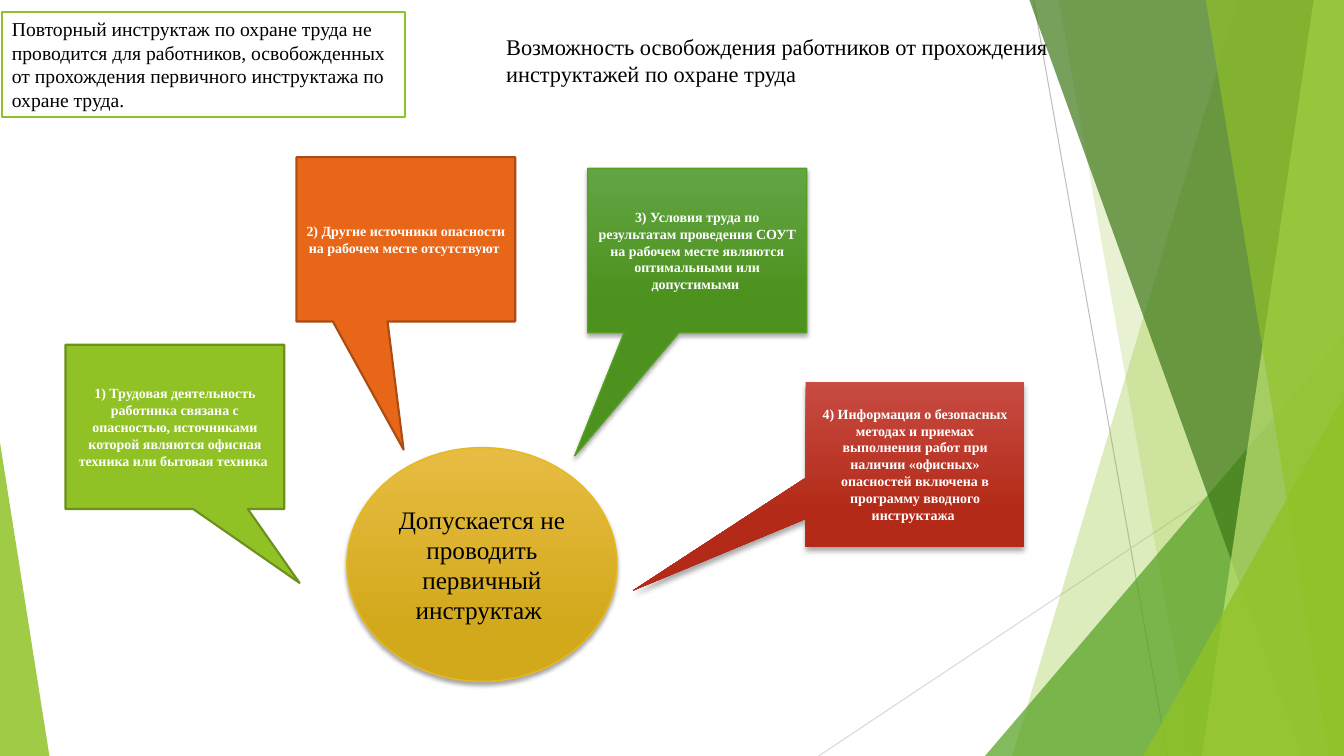
from dataclasses import dataclass

from lxml import etree
from pptx import Presentation
from pptx.dml.color import RGBColor
from pptx.enum.shapes import MSO_CONNECTOR, MSO_SHAPE
from pptx.enum.text import MSO_ANCHOR, MSO_AUTO_SIZE, PP_ALIGN
from pptx.oxml.ns import qn
from pptx.util import Inches, Pt

TRIANGLE = MSO_SHAPE.ISOSCELES_TRIANGLE
CALLOUT = MSO_SHAPE.RECTANGULAR_CALLOUT
ELLIPSE = MSO_SHAPE.OVAL
RECTANGLE = MSO_SHAPE.RECTANGLE
STRAIGHT = MSO_CONNECTOR.STRAIGHT
LEFT, CENTER = PP_ALIGN.LEFT, PP_ALIGN.CENTER
TOP, MIDDLE = MSO_ANCHOR.TOP, MSO_ANCHOR.MIDDLE
FIXED = MSO_AUTO_SIZE.NONE

WIDTH, HEIGHT = 13.33, 7.5
CALLOUT_SIZE = (2.17, 1.63)


@dataclass(frozen=True)
class Theme:
    font: str = "Times New Roman"
    title_size: int = 16
    center_size: int = 18
    note_size: int = 14
    callout_size: int = 10
    black: str = "000000"
    white: str = "FFFFFF"
    lime: str = "90C226"
    lime_edge: str = "6B901C"
    pale_lime: str = "C0E474"
    green: str = "54A021"
    dark_green: str = "3F7819"
    green_fade: tuple = ("63A545", "4D921E")
    orange: str = "E76618"
    orange_edge: str = "AB4B12"
    red_fade: tuple = ("C74B42", "B32B18")
    gold: str = "E6B91E"
    gold_fade: tuple = ("E7BC43", "D2A91B")
    gray: str = "BFBFBF"
    light_gray: str = "D9D9D9"


THEME = Theme()


def rgb(color):
    return RGBColor.from_string(color)


def set_fill(sp, color, opacity=100):
    sp.shadow.inherit = False
    if isinstance(color, tuple):
        sp.fill.gradient()
        sp.fill.gradient_angle = 270
        for stop, position, shade in zip(sp.fill.gradient_stops, (0, 0.78), color):
            stop.position = position
            stop.color.rgb = rgb(shade)
        return
    sp.fill.solid()
    sp.fill.fore_color.rgb = rgb(color)
    if opacity < 100:
        srgb = sp.fill._xPr.find(qn("a:solidFill")).find(qn("a:srgbClr"))
        etree.SubElement(srgb, qn("a:alpha"), val=str(opacity * 1000))


def set_line(sp, color=None, width=1.0):
    if color is None:
        sp.line.fill.background()
        return
    sp.line.color.rgb = rgb(color)
    sp.line.width = Pt(width)


def add_shadow(sp, blur, distance):
    effects = sp._element.spPr.find(qn("a:effectLst"))
    outer = etree.SubElement(
        effects, qn("a:outerShdw"), blurRad=str(Pt(blur)), dist=str(Pt(distance)),
        dir="5400000", rotWithShape="0")
    srgb = etree.SubElement(outer, qn("a:srgbClr"), val=THEME.black)
    etree.SubElement(srgb, qn("a:alpha"), val="35000")


def set_text(sp, text, size, color, bold=False, align=CENTER, anchor=MIDDLE):
    tf = sp.text_frame
    tf.word_wrap = True
    tf.auto_size = FIXED
    tf.vertical_anchor = anchor
    p = tf.paragraphs[0]
    p.alignment = align
    r = p.add_run()
    r.text = text
    r.font.name = THEME.font
    r.font.size = Pt(size)
    r.font.bold = bold
    r.font.color.rgb = rgb(color)


def add_shape(s, kind, box, fill, line=None, width=1.0, opacity=100, adjust=()):
    sp = s.shapes.add_shape(kind, *map(Inches, box))
    for i, value in enumerate(adjust):
        sp.adjustments[i] = value
    set_fill(sp, fill, opacity)
    set_line(sp, line, width)
    return sp


def add_thin_line(s, start, end, color):
    line = s.shapes.add_connector(STRAIGHT, *map(Inches, start + end))
    set_line(line, color, 0.75)
    etree.SubElement(line._element.spPr, qn("a:effectLst"))


def add_facet(s, x_top, x_bottom, color, opacity):
    builder = s.shapes.build_freeform(Inches(x_top), Inches(0))
    corners = ((WIDTH, 0), (WIDTH, HEIGHT), (x_bottom, HEIGHT))
    builder.add_line_segments([(Inches(x), Inches(y)) for x, y in corners])
    sp = builder.convert_to_shape()
    set_fill(sp, color, opacity)
    set_line(sp)


def add_corner(s, left, top, width, color, opacity, apex):
    box = (left, top, width, HEIGHT - top)
    add_shape(s, TRIANGLE, box, color, opacity=opacity, adjust=(apex,))


def add_backdrop(s):
    add_thin_line(s, (10.25, 0), (11.58, HEIGHT), THEME.gray)
    add_thin_line(s, (WIDTH, 4.03), (8.12, HEIGHT), THEME.light_gray)
    add_facet(s, 12.28, 10.04, THEME.lime, 30)
    add_facet(s, 10.5, 11.83, THEME.lime, 20)
    add_corner(s, 9.77, 3.33, 3.56, THEME.green, 72, 1)
    add_facet(s, 10.21, 12.91, THEME.dark_green, 70)
    add_facet(s, 13.03, 11.92, THEME.pale_lime, 70)
    add_facet(s, 11.96, 13.18, THEME.lime, 65)
    add_corner(s, 11.34, 3.93, 1.99, THEME.lime, 80, 1)
    add_corner(s, 0, 4.39, 0.49, THEME.lime, 85, 0)


def add_title(s, text):
    title = s.shapes.title
    title.left, title.top, title.width, title.height = map(
        Inches, (4.92, 0.28, 6.67, 0.64))
    s.shapes._spTree.append(title._element)
    set_text(title, text, THEME.title_size, THEME.black, align=LEFT, anchor=TOP)


def add_callout(s, text, position, pointer, fill, line=None, width=1.0, shadow=None):
    sp = add_shape(s, CALLOUT, position + CALLOUT_SIZE, fill, line, width,
                   adjust=pointer)
    if shadow:
        add_shadow(sp, *shadow)
    set_text(sp, text, THEME.callout_size, THEME.white, bold=True)


def main():
    prs = Presentation()
    prs.slide_width, prs.slide_height = Inches(WIDTH), Inches(HEIGHT)
    s = prs.slides.add_slide(prs.slide_layouts[5])
    add_backdrop(s)
    add_title(s, "Возможность освобождения работников от прохождения "
                 "инструктажей по охране труда")

    center = add_shape(s, ELLIPSE, (3.44, 4.44, 2.68, 2.32), THEME.gold_fade, THEME.gold)
    add_shadow(center, 3, 2)
    set_text(center, "Допускается не проводить первичный инструктаж ",
             THEME.center_size, THEME.black)

    add_callout(s, "1) Трудовая деятельность работника связана с опасностью, "
                   "источниками которой являются офисная техника или бытовая техника ",
                (0.65, 3.42), (0.57, 0.95), THEME.lime, THEME.lime_edge, 1.5)
    add_callout(s, "2) Другие источники опасности на рабочем месте отсутствуют ",
                (2.94, 1.56), (-0.01, 1.28), THEME.orange, THEME.orange_edge, 1.5)
    add_callout(s, "3) Условия труда по результатам проведения СОУТ на рабочем "
                   "месте являются оптимальными или допустимыми ",
                (5.83, 1.67), (-0.56, 1.25), THEME.green_fade, THEME.green,
                shadow=(3, 2))
    add_callout(s, "4) Информация о безопасных методах и приемах выполнения работ "
                   "при наличии «офисных» опасностей включена в программу вводного "
                   "инструктажа ",
                (7.99, 3.79), (-1.29, 0.77), THEME.red_fade, shadow=(4, 3))

    note = add_shape(s, RECTANGLE, (0.02, 0.12, 4, 1.04), THEME.white, THEME.lime, 1.5)
    set_text(note, "Повторный инструктаж по охране труда не проводится для работников, "
                   "освобожденных от прохождения первичного инструктажа по охране труда.",
             THEME.note_size, THEME.black, align=LEFT, anchor=TOP)
    prs.save("out.pptx")


if __name__ == "__main__":
    main()
